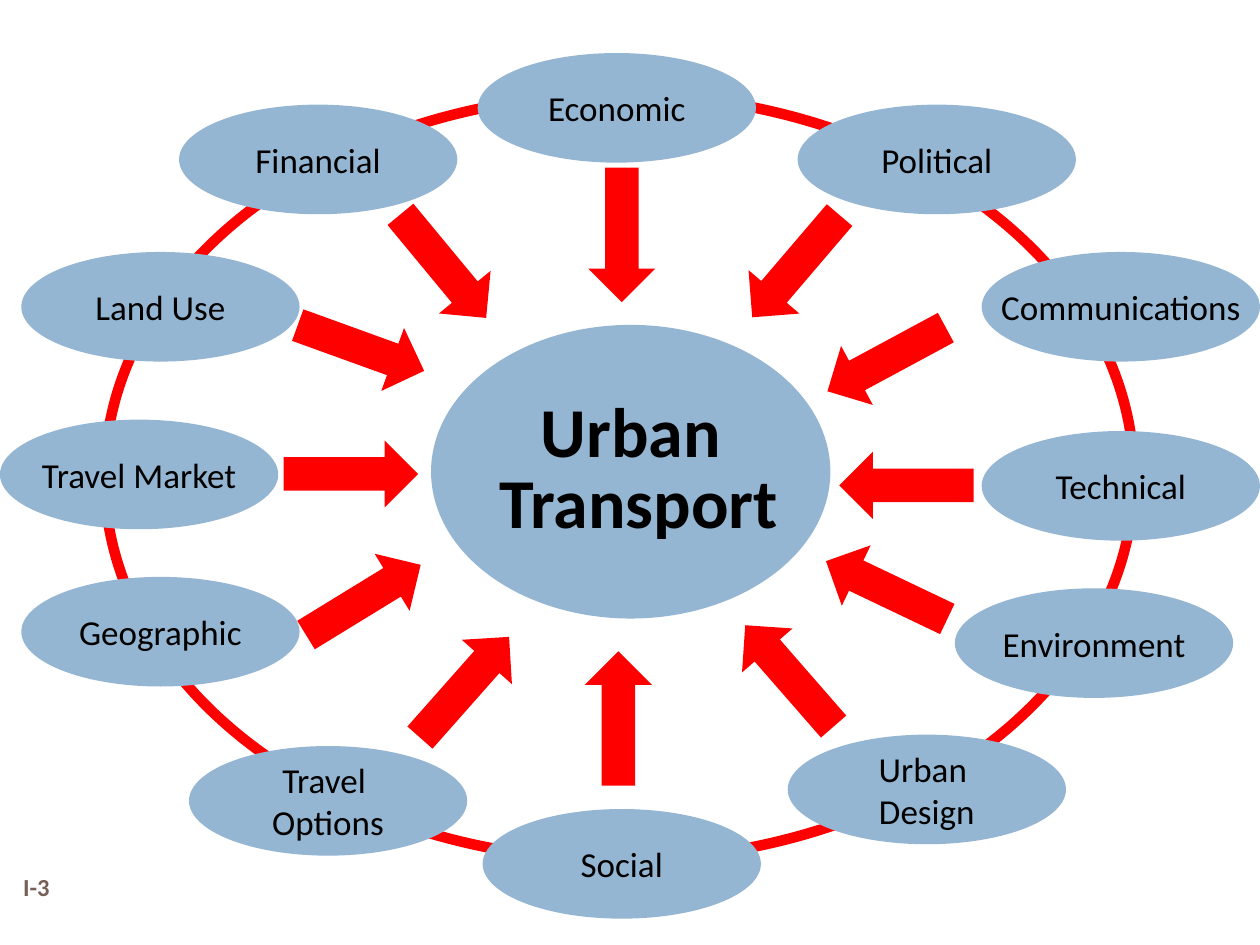
"""Build a slide of twelve factors pointing at urban transport."""
from pptx import Presentation
from pptx import util as u
from pptx.dml.color import RGBColor
from pptx.enum import shapes, text

COLOURS = {"blue": "94B6D2", "red": "FF0000", "black": "000000", "brown": "775F55"}
FONT = "Calibri"
FACTOR_SIZE = (5.61, 2.21)
ARROW_SIZE = (1.35, 2.71)
RING = (2.11, 1.9, 20.75, 15.44)
CENTRE = (8.69, 6.55, 8.05, 5.92)
PAGE_NUMBER = (0, 17.35, 1.47, 1.07)

# label, label corner, arrow corner, arrow rotation
FACTORS = [
    ("Economic", (9.63, 1.07), (11.86, 3.38), 180),
    ("Political", (16.08, 2.11), (15.37, 4.01), 220.5),
    ("Communications", (19.79, 5.08), (17.2, 5.89), 241.7),
    ("Technical", (19.79, 8.69), (17.6, 8.43), 270),
    ("Environment", (19.25, 11.86), (17.2, 10.54), 295.5),
    ("Urban \nDesign", (15.88, 14.81), (15.24, 12.27), 318.9),
    ("Social", (9.73, 16.31), (11.79, 13.13), 0),
    ("Travel \nOptions", (3.81, 15.04), (8.69, 12.5), 41.5),
    ("Geographic", (0.43, 11.63), (6.65, 10.74), 58.5),
    ("Travel Market", (0, 8.46), (6.4, 8.2), 90),
    ("Land Use", (0.43, 5.08), (6.6, 5.66), 109.9),
    ("Financial", (3.61, 2.11), (8.26, 4.01), 140.4),
]


def rgb(name):
    """Return the named colour."""
    return RGBColor.from_string(COLOURS[name])


def write(box, words, size=20, bold=False, colour="black", spacing=None):
    """Write centred lines of text in a box."""
    frame = box.text_frame
    frame.word_wrap = False
    frame.vertical_anchor = text.MSO_ANCHOR.MIDDLE
    frame.margin_left = frame.margin_right = 0
    frame.text = words
    for para in frame.paragraphs:
        para.alignment = text.PP_ALIGN.CENTER
        para.line_spacing = spacing
        for span in para.runs:
            span.font.name = FONT
            span.font.size = u.Pt(size)
            span.font.bold = bold
            span.font.color.rgb = rgb(colour)


def add_shape(page, kind, place, fill=None, line=None):
    """Add a flat preset shape, filled or outlined."""
    shape = page.shapes.add_shape(kind, *map(u.Cm, place))
    shape.shadow.inherit = False
    if fill:
        shape.fill.solid()
        shape.fill.fore_color.rgb = rgb(fill)
    else:
        shape.fill.background()
    if line:
        shape.line.color.rgb = rgb(line)
        shape.line.width = u.Pt(6)
    else:
        shape.line.fill.background()
    return shape


def main():
    """Build and save the deck."""
    deck = Presentation()
    deck.slide_width, deck.slide_height = u.Cm(25.4), u.Cm(19.05)
    page = deck.slides.add_slide(deck.slide_layouts[6])
    oval, arrow_kind = shapes.MSO_SHAPE.OVAL, shapes.MSO_SHAPE.UP_ARROW

    number = page.shapes.add_textbox(*map(u.Cm, PAGE_NUMBER))
    write(number, "I-3", size=14, bold=True, colour="brown")
    add_shape(page, oval, RING, line="red")
    centre = add_shape(page, oval, CENTRE, fill="blue")
    write(centre, "Urban\n Transport", size=40, bold=True, spacing=0.85)

    for label, corner, _, _ in FACTORS:
        write(add_shape(page, oval, corner + FACTOR_SIZE, fill="blue"), label)
    for _, _, corner, rotation in FACTORS:
        arrow = add_shape(page, arrow_kind, corner + ARROW_SIZE, fill="red")
        arrow.rotation = rotation

    deck.save("out.pptx")


if __name__ == "__main__":
    main()
